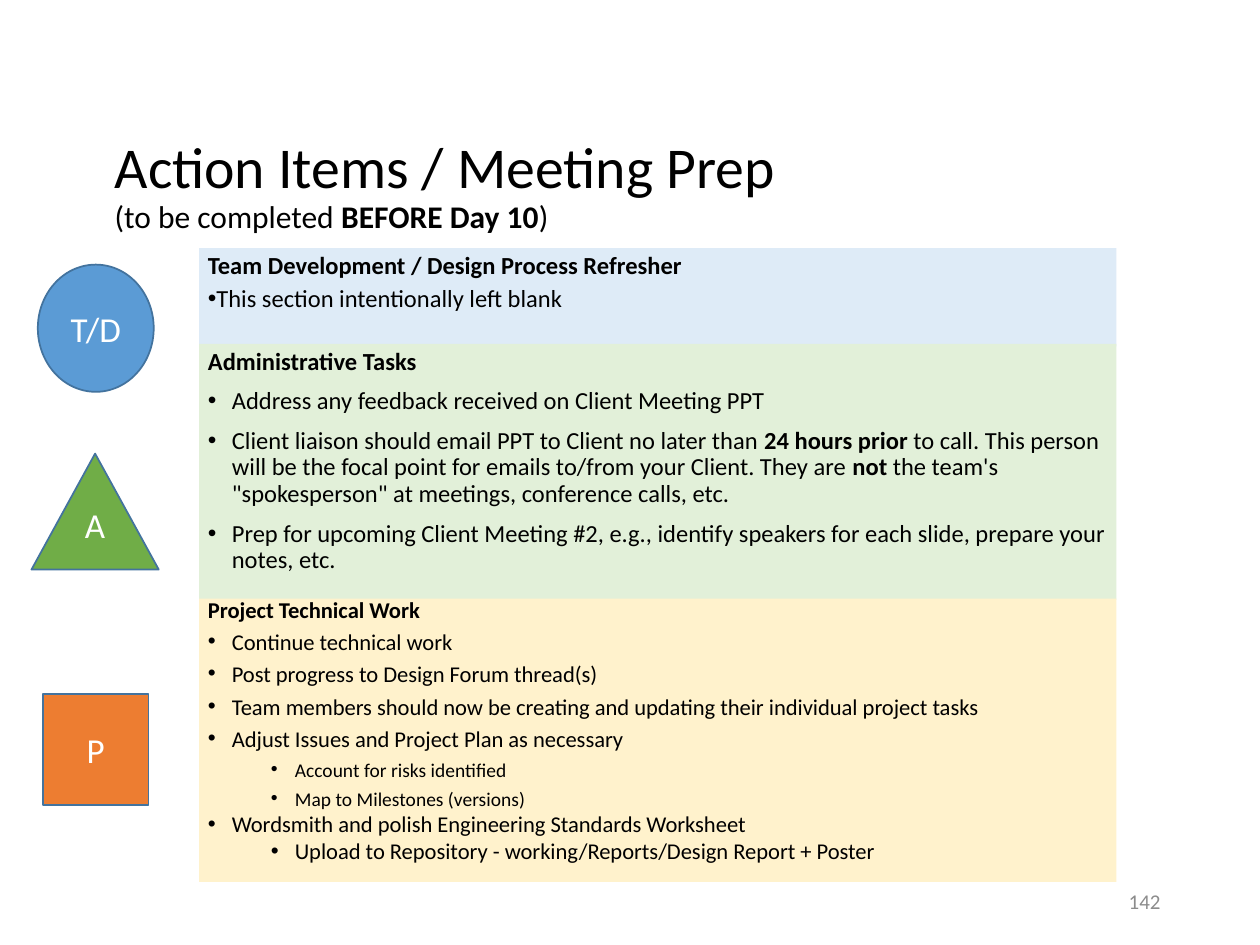
from lxml import etree
from pptx import Presentation
from pptx.dml.color import RGBColor
from pptx.enum.shapes import MSO_SHAPE as SHAPE
from pptx.enum.text import MSO_ANCHOR as ANCHOR, MSO_AUTO_SIZE as AUTO, PP_ALIGN as ALIGN
from pptx.oxml.ns import qn
from pptx.util import Inches, Pt

FONT = "Calibri"
BLACK = RGBColor(0x00, 0x00, 0x00)
WHITE = RGBColor(0xFF, 0xFF, 0xFF)
GRAY = RGBColor(0x8C, 0x8C, 0x8C)
OUTLINE = RGBColor(0x43, 0x73, 0x9E)
BLUE, PALE_BLUE = RGBColor(0x5B, 0x9B, 0xD5), RGBColor(0xDE, 0xEB, 0xF7)
GREEN, PALE_GREEN = RGBColor(0x70, 0xAD, 0x47), RGBColor(0xE2, 0xF0, 0xD9)
ORANGE, PALE_YELLOW = RGBColor(0xED, 0x7D, 0x31), RGBColor(0xFF, 0xF2, 0xCC)

PANEL_LEFT, PANEL_WIDTH = 1.58, 7.28
HANG = 0.19

# Each item: text (** toggles bold), left margin, size, line spacing, space before
TEAM_ITEMS = [("This section intentionally left blank", 0.06, 14, 0.9, 3.8)]
ADMIN_ITEMS = [(text, HANG, 14, 0.9, 7.5) for text in (
    "Address any feedback received on Client Meeting PPT",
    "Client liaison should email PPT to Client no later than **24 hours prior** to call. "
    "This person will be the focal point for emails to/from your Client. They are **not** "
    "the team's \"spokesperson\" at meetings, conference calls, etc.",
    "Prep for upcoming Client Meeting #2, e.g., identify speakers for each slide, "
    "prepare your notes, etc.",
)]
PROJECT_ITEMS = [(text, HANG, 12.9, 0.7, 7.5) for text in (
    "Continue technical work",
    "Post progress to Design Forum thread(s)",
    "Team members should now be creating and updating their individual project tasks",
    "Adjust Issues and Project Plan as necessary",
)] + [(text, 0.69, 11.1, 0.7, 7.5) for text in (
    "Account for risks identified",
    "Map to Milestones (versions)",
)] + [
    ("Wordsmith and polish Engineering Standards Worksheet", HANG, 12.9, 1.0, 0),
    ("Upload to Repository - working/Reports/Design Report + Poster", 0.69, 12.9, 1.0, 0),
]


def format_run(r, size, color=BLACK, bold=False):
    r.font.name = FONT
    r.font.size = Pt(size)
    r.font.color.rgb = color
    r.font.bold = bold


def add_marked_runs(p, text, size):
    for i, part in enumerate(text.split("**")):
        r = p.add_run()
        r.text = part
        format_run(r, size, bold=i % 2 == 1)


def set_bullet(p, margin):
    pPr = p._p.get_or_add_pPr()
    pPr.set("marL", str(Inches(margin)))
    pPr.set("indent", str(-Inches(HANG)))
    etree.SubElement(pPr, qn("a:buFont")).set("typeface", "Arial")
    etree.SubElement(pPr, qn("a:buChar")).set("char", "•")


def add_box(slide, shape_type, box, fill):
    sp = slide.shapes.add_shape(shape_type, *map(Inches, box))
    sp.shadow.inherit = False
    sp.fill.solid()
    sp.fill.fore_color.rgb = fill
    return sp


def add_title(slide, box):
    title = slide.shapes.title
    title.left, title.top, title.width, title.height = map(Inches, box)
    tf = title.text_frame
    tf.auto_size = AUTO.NONE
    tf.vertical_anchor = ANCHOR.MIDDLE
    p = tf.paragraphs[0]
    p.alignment = ALIGN.LEFT
    p.line_spacing = 0.9
    add_marked_runs(p, "Action Items / Meeting Prep", 33)
    p.add_line_break()
    add_marked_runs(p, "(to be completed **BEFORE Day 10**)", 18)


def add_panel(slide, top, height, fill, heading, items):
    sp = add_box(slide, SHAPE.RECTANGLE, (PANEL_LEFT, top, PANEL_WIDTH, height), fill)
    sp.line.fill.background()
    tf = sp.text_frame
    tf.vertical_anchor = ANCHOR.TOP
    tf.margin_left = tf.margin_right = Inches(0.07)
    tf.margin_top = tf.margin_bottom = Inches(0.04)
    _, _, size, spacing, _ = items[0]
    rows = [(f"**{heading}**", None, size, spacing, 7.5)] + items
    for i, (text, margin, size, spacing, before) in enumerate(rows):
        p = tf.add_paragraph() if i else tf.paragraphs[0]
        p.alignment = ALIGN.LEFT
        p.line_spacing = spacing
        p.space_before = Pt(before)
        if margin is not None:
            set_bullet(p, margin)
        add_marked_runs(p, text, size)


def add_badge(slide, shape_type, box, fill, label, bottom_inset=0.05):
    sp = add_box(slide, shape_type, box, fill)
    sp.line.color.rgb = OUTLINE
    sp.line.width = Pt(1)
    tf = sp.text_frame
    tf.text = label
    tf.vertical_anchor = ANCHOR.MIDDLE
    tf.margin_bottom = Inches(bottom_inset)
    p = tf.paragraphs[0]
    p.alignment = ALIGN.CENTER
    format_run(p.runs[0], 20, WHITE)


def add_page_number(slide, box, number):
    tf = slide.shapes.add_textbox(*map(Inches, box)).text_frame
    tf.word_wrap = True
    tf.text = number
    tf.vertical_anchor = ANCHOR.MIDDLE
    p = tf.paragraphs[0]
    p.alignment = ALIGN.RIGHT
    format_run(p.runs[0], 12, GRAY)


def main():
    prs = Presentation()
    prs.slide_width, prs.slide_height = Inches(10), Inches(7.5)
    slide = prs.slides.add_slide(prs.slide_layouts[5])
    add_title(slide, (0.81, 1, 8.62, 0.97))

    # Task panels
    add_panel(slide, 1.97, 0.78, PALE_BLUE,
              "Team Development / Design Process Refresher", TEAM_ITEMS)
    add_panel(slide, 2.73, 2.03, PALE_GREEN, "Administrative Tasks", ADMIN_ITEMS)
    add_panel(slide, 4.75, 2.25, PALE_YELLOW, "Project Technical Work", PROJECT_ITEMS)

    # Category badges
    add_badge(slide, SHAPE.OVAL, (0.3, 2.1, 0.92, 1.01), BLUE, "T/D")
    add_badge(slide, SHAPE.ISOSCELES_TRIANGLE, (0.25, 3.6, 1.01, 0.92), GREEN, "A", 0.3)
    add_badge(slide, SHAPE.RECTANGLE, (0.34, 5.51, 0.84, 0.88), ORANGE, "P")

    add_page_number(slide, (7.06, 6.95, 2.25, 0.4), "142")
    prs.save("out.pptx")


if __name__ == "__main__":
    main()
